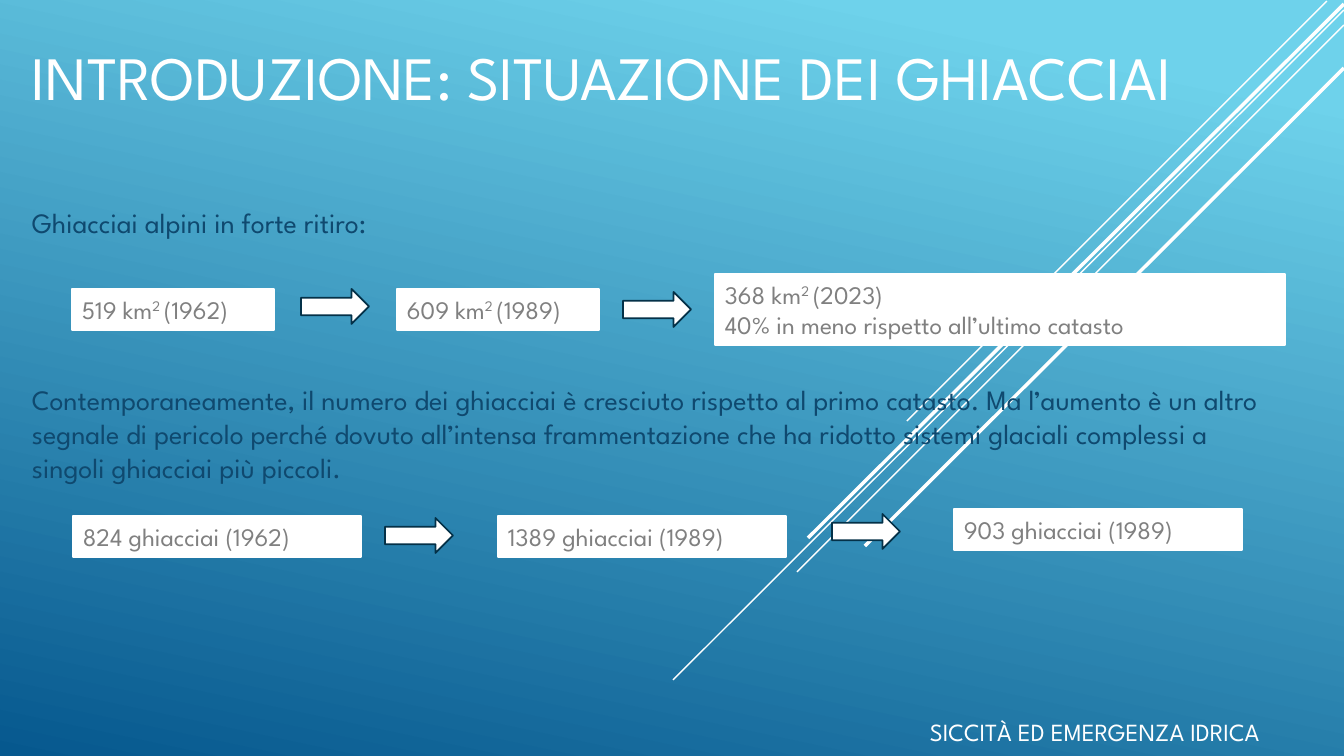
from pptx import Presentation, util as u
from pptx.dml.color import RGBColor
from pptx.enum import shapes, text
from pptx.oxml.ns import qn
from lxml import etree

PX = 9071.43  # EMU per px, 100.8 px to the inch
FONT = "League Spartan"
HUES = {"sky": "6ED2EB", "deep": "06588E", "white": "FFFFFF",
        "navy": "0F496F", "gray": "808080", "edge": "043148"}


def rgb(name):
    return RGBColor.from_string(HUES[name])


def write(shape, lines, size, hue, anchor=text.MSO_ANCHOR.TOP):
    """Fill a shape with lines; '^' sets off a superscript part."""
    frame = shape.text_frame
    frame.word_wrap = True
    frame.vertical_anchor = anchor
    for i, line in enumerate(lines):
        para = frame.add_paragraph() if i else frame.paragraphs[0]
        para.alignment = text.PP_ALIGN.LEFT
        font = para.font
        font.name, font.size, font.color.rgb = FONT, u.Pt(size), rgb(hue)
        for j, part in enumerate(line.split("^")):
            run = para.add_run()
            run.text = part
            if j == 1:
                run._r.get_or_add_rPr().set("baseline", "30000")


deck = Presentation()
deck.slide_width, deck.slide_height = u.Emu(12192000), u.Emu(6858000)
slide = deck.slides.add_slide(deck.slide_layouts[6])
items = slide.shapes

# Background gradient
back = slide.background.fill
back.gradient()
back.gradient_angle = 258
for stop, (spot, hue) in zip(back.gradient_stops, [(0.1, "sky"), (1, "deep")]):
    stop.position, stop.color.rgb = spot, rgb(hue)

# Diagonal rays
rays = [(1327, 1, 907, 421, 1), (1344, 10, 673, 680, 1), (1344, 25, 797, 572, 1),
        (1344, 4, 808, 538, 2.5), (1344, 68, 865, 546, 2.5)]
for *ends, width in rays:
    ray = items.add_connector(shapes.MSO_CONNECTOR.STRAIGHT,
                              *[round(v * PX) for v in ends])
    ray.line.color.rgb, ray.line.width = rgb("white"), u.Pt(width)
    etree.SubElement(ray._element.spPr, qn("a:effectLst"))

# Title, footer and paragraphs
low, top = text.MSO_ANCHOR.BOTTOM, text.MSO_ANCHOR.TOP
notes = [
    (22, 4, 1305, 114, 44, "white", low, "INTRODUZIONE: SITUAZIONE DEI GHIACCIAI"),
    (920, 702, 423, 49, 17.6, "white", low, "SICCITÀ ED EMERGENZA IDRICA"),
    (22, 201, 1257, 78, 20, "navy", top, "Ghiacciai alpini in forte ritiro:"),
    (22, 378, 1257, 112, 20, "navy", top,
     "Contemporaneamente, il numero dei ghiacciai è cresciuto rispetto al primo "
     "catasto. Ma l’aumento è un altro segnale di pericolo perché dovuto "
     "all’intensa frammentazione che ha ridotto sistemi glaciali complessi a "
     "singoli ghiacciai più piccoli."),
]
for *area, size, hue, anchor, words in notes:
    box = items.add_textbox(*[round(v * PX) for v in area])
    write(box, [words], size, hue, anchor)

# Boxes with areas and counts, and the arrows between them
rect, arrow = shapes.MSO_SHAPE.RECTANGLE, shapes.MSO_SHAPE.RIGHT_ARROW
cards = [
    (72, 289, 202, 41, ["519 km^2 ^(1962)"]),
    (397, 289, 202, 41, ["609 km^2 ^(1989)"]),
    (715, 274, 570, 71, ["368 km^2 ^(2023)",
                         "40% in meno rispetto all’ultimo catasto"]),
    (73, 516, 288, 41, ["824 ghiacciai (1962)"]),
    (498, 516, 288, 41, ["1389 ghiacciai (1989)"]),
    (954, 509, 288, 41, ["903 ghiacciai (1989)"]),
]
spots = [(301, 289), (623, 292), (385, 518), (832, 514)]
parts = [(rect, *card, "white", 1.5) for card in cards]
parts += [(arrow, x, y, 68, 35, [], "edge", 1.25) for x, y in spots]
for kind, x, y, w, h, lines, edge, width in parts:
    part = items.add_shape(kind, *[round(v * PX) for v in (x, y, w, h)])
    part.shadow.inherit = False
    part.fill.solid()
    part.fill.fore_color.rgb = rgb("white")
    part.line.color.rgb, part.line.width = rgb(edge), u.Pt(width)
    write(part, lines, 18, "gray")

deck.save("out.pptx")
